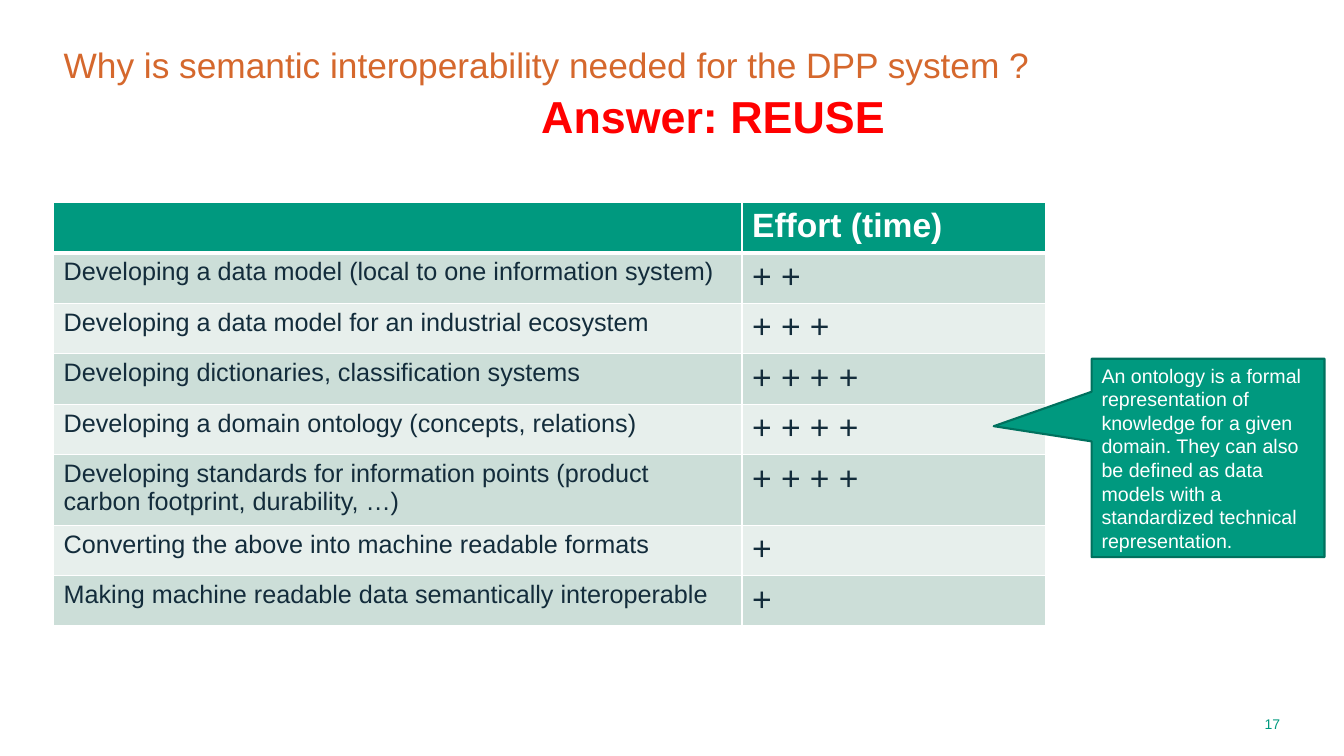
from lxml import etree
from pptx import Presentation
from pptx.dml.color import RGBColor
from pptx.enum.shapes import MSO_SHAPE
from pptx.enum.text import MSO_ANCHOR, MSO_AUTO_SIZE, PP_ALIGN
from pptx.oxml.ns import qn
from pptx.util import Cm, Pt

CALLOUT = MSO_SHAPE.RECTANGULAR_CALLOUT
TOP, MIDDLE = MSO_ANCHOR.TOP, MSO_ANCHOR.MIDDLE
NO_FIT, GROW = MSO_AUTO_SIZE.NONE, MSO_AUTO_SIZE.SHAPE_TO_FIT_TEXT
LEFT, RIGHT = PP_ALIGN.LEFT, PP_ALIGN.RIGHT

FONT = "Arial"
COLORS = {
    "green": "00997F",
    "dark_green": "00715E",
    "orange": "D5682D",
    "red": "FF0000",
    "ink": "132C3B",
    "white": "FFFFFF",
    "band_dark": "CCDED8",
    "band_light": "E7EFEC",
}
EFFORTS = [
    ("Developing a data model (local to one information system)", "+ +"),
    ("Developing a data model for an industrial ecosystem", "+ + +"),
    ("Developing dictionaries, classification systems", "+ + + +"),
    ("Developing a domain ontology (concepts, relations)", "+ + + +"),
    ("Developing standards for information points (product carbon footprint, "
     "durability, …)", "+ + + +"),
    ("Converting the above into machine readable formats", "+"),
    ("Making machine readable data semantically interoperable", "+"),
]


def rgb(name):
    return RGBColor.from_string(COLORS[name])


def add_run(p, text, size, color, bold=False):
    r = p.add_run()
    r.text = text
    r.font.name = FONT
    r.font.size = Pt(size)
    r.font.bold = bold
    r.font.color.rgb = rgb(color)


def set_borders(cell, bottom):
    tcPr = cell._tc.get_or_add_tcPr()
    for side, width in (("lnL", 1), ("lnR", 1), ("lnT", 1), ("lnB", bottom)):
        ln = etree.SubElement(tcPr, qn(f"a:{side}"), w=str(Pt(width)))
        fill = etree.SubElement(ln, qn("a:solidFill"))
        etree.SubElement(fill, qn("a:srgbClr"), val=COLORS["white"])


def fill_cell(cell, text, size, color, fill, bold=False, bottom=1):
    set_borders(cell, bottom)
    cell.fill.solid()
    cell.fill.fore_color.rgb = rgb(fill)
    if text:
        add_run(cell.text_frame.paragraphs[0], text, size, color, bold)


def add_heading(slide, x, y, w, h):
    title = slide.shapes.title
    title.left, title.top, title.width, title.height = Cm(x), Cm(y), Cm(w), Cm(h)
    tf = title.text_frame
    tf.word_wrap = True
    tf.auto_size = NO_FIT
    tf.vertical_anchor = TOP
    p = tf.paragraphs[0]
    p.alignment = LEFT
    p.line_spacing = 0.9
    add_run(p, "Why is semantic interoperability needed for the DPP system ?",
            25.2, "orange")


def add_answer(slide, x, y, w, h):
    sp = slide.shapes.add_textbox(Cm(x), Cm(y), Cm(w), Cm(h))
    tf = sp.text_frame
    tf.word_wrap = False
    tf.auto_size = GROW
    add_run(tf.paragraphs[0], "Answer: REUSE", 32, "red", True)


def add_effort_table(slide, x, y, w, row_h, tall_h):
    n = len(EFFORTS) + 1
    frame = slide.shapes.add_table(n, 2, Cm(x), Cm(y), Cm(w), Cm(row_h * n))
    table = frame.table
    effort_w = 7.65
    table.columns[0].width = Cm(w - effort_w)
    table.columns[1].width = Cm(effort_w)
    for row in table.rows:
        row.height = Cm(row_h)
    table.rows[5].height = Cm(tall_h)
    for col, text in enumerate(("", "Effort (time)")):
        fill_cell(table.cell(0, col), text, 24, "white", "green", True, 3)
    for i, (task, effort) in enumerate(EFFORTS, 1):
        band = "band_dark" if i % 2 else "band_light"
        fill_cell(table.cell(i, 0), task, 18, "ink", band)
        fill_cell(table.cell(i, 1), effort, 24, "ink", band)


def add_ontology_callout(slide, x, y, w, h):
    sp = slide.shapes.add_shape(CALLOUT, Cm(x), Cm(y), Cm(w), Cm(h))
    sp.adjustments[0] = -0.92
    sp.adjustments[1] = -0.16
    sp.shadow.inherit = False
    sp.fill.solid()
    sp.fill.fore_color.rgb = rgb("green")
    sp.line.color.rgb = rgb("dark_green")
    sp.line.width = Pt(1.5)
    tf = sp.text_frame
    tf.word_wrap = True
    tf.vertical_anchor = MIDDLE
    p = tf.paragraphs[0]
    p.alignment = LEFT
    add_run(p, "An ontology is a formal representation of knowledge for a given "
            "domain. They can also be defined as data models with a standardized "
            "technical representation.", 14, "white")


def add_page_number(slide, x, y, w, h):
    sp = slide.shapes.add_textbox(Cm(x), Cm(y), Cm(w), Cm(h))
    tf = sp.text_frame
    tf.word_wrap = True
    tf.vertical_anchor = MIDDLE
    p = tf.paragraphs[0]
    p.alignment = RIGHT
    add_run(p, "17", 10, "green")


def main():
    prs = Presentation()
    prs.slide_width = Cm(33.87)
    prs.slide_height = Cm(19.05)
    slide = prs.slides.add_slide(prs.slide_layouts[5])
    add_page_number(slide, 31.29, 17.93, 1.22, 0.64)
    add_heading(slide, 1.35, 1.09, 25.27, 2.34)
    add_effort_table(slide, 1.35, 5.1, 25, 1.2, 1.67)
    add_answer(slide, 13.39, 2.11, 9.25, 1.63)
    add_ontology_callout(slide, 27.51, 9.04, 5.87, 5)
    prs.save("out.pptx")


if __name__ == "__main__":
    main()
